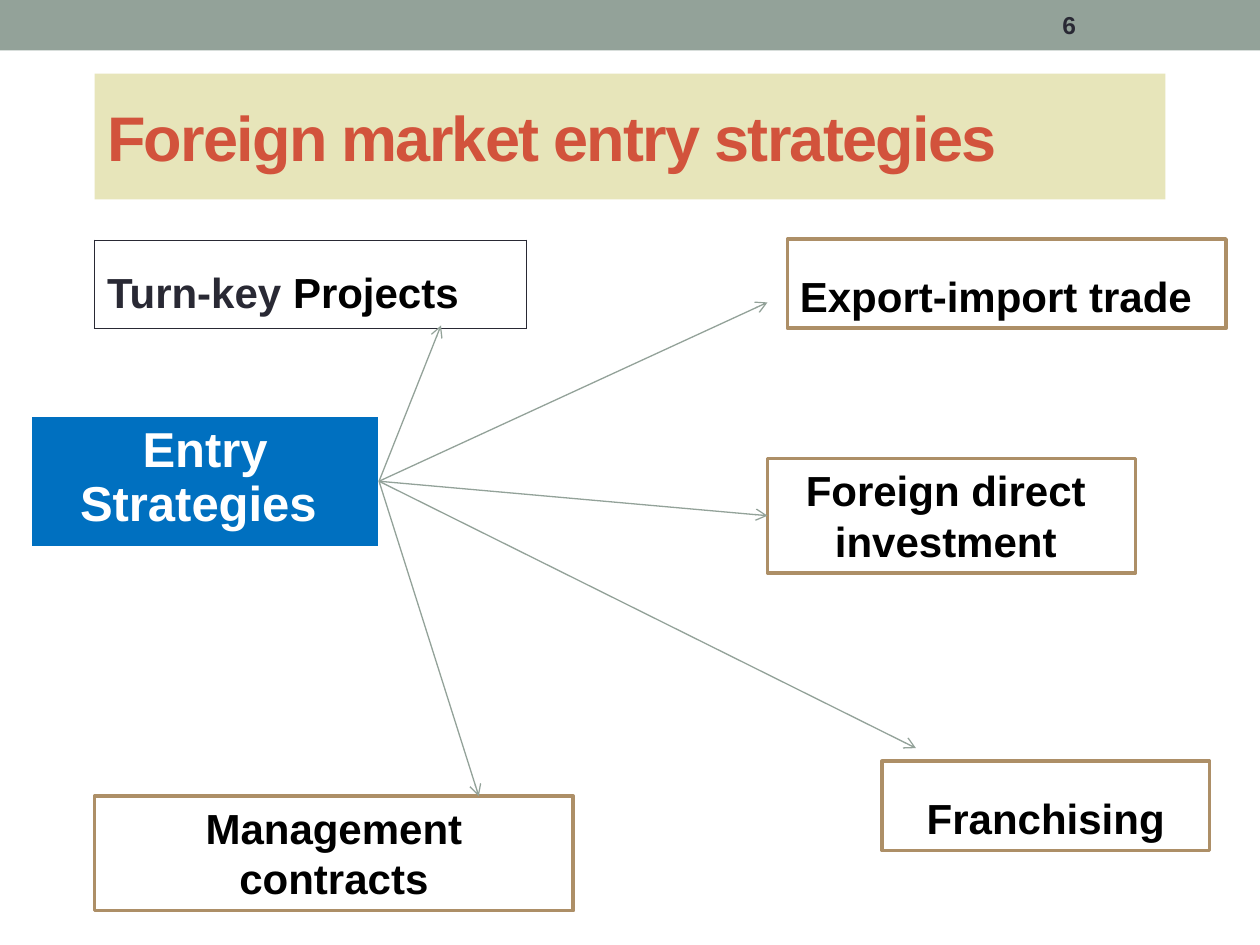
import pptx
import pptx.util
import pptx.dml.color
import pptx.enum.shapes
import pptx.enum.text
import pptx.oxml
import pptx.oxml.ns
from lxml import etree

Pt = pptx.util.Pt
RGB = pptx.dml.color.RGBColor.from_string
ALIGN = pptx.enum.text.PP_ALIGN
ANCHOR = pptx.enum.text.MSO_ANCHOR
RECTANGLE = pptx.enum.shapes.MSO_SHAPE.RECTANGLE
qn = pptx.oxml.ns.qn

COLORS = {
    "band": "93A299", "title_fill": "E7E5BA", "title": "D2533C",
    "ink": "292934", "black": "000000", "white": "FFFFFF",
    "border": "AD8F67", "hub": "0070C0",
}


def style(paragraph, size, color, align=ALIGN.LEFT, spacing=None):
    paragraph.alignment = align
    if spacing:
        paragraph.line_spacing = spacing
    paragraph.font.name = "Arial"
    paragraph.font.size = Pt(size)
    paragraph.font.bold = True
    paragraph.font.color.rgb = RGB(COLORS[color])


def add_cell(left, top, width, height, fill, border):
    table = slide.shapes.add_table(1, 1, Pt(left), Pt(top), Pt(width), Pt(height)).table
    table.first_row = table.horz_banding = False
    cell = table.cell(0, 0)
    properties = cell._tc.get_or_add_tcPr()
    for side in ("lnL", "lnR", "lnT", "lnB"):
        line = etree.SubElement(properties, qn("a:" + side), w=str(Pt(1)))
        solid = etree.SubElement(line, qn("a:solidFill"))
        etree.SubElement(solid, qn("a:srgbClr"), val=COLORS[border])
    cell.fill.solid()
    cell.fill.fore_color.rgb = RGB(COLORS[fill])
    return cell


presentation = pptx.Presentation()
presentation.slide_width, presentation.slide_height = Pt(720), Pt(540)
slide = presentation.slides.add_slide(presentation.slide_layouts[5])

band = slide.shapes.add_shape(RECTANGLE, 0, 0, Pt(720), Pt(28.8))
band.shadow.inherit = False
band.fill.solid()
band.fill.fore_color.rgb = RGB(COLORS["band"])
band.line.fill.background()

title = slide.shapes.title
title.left, title.top, title.width, title.height = Pt(54), Pt(42), Pt(612), Pt(72)
title.fill.solid()
title.fill.fore_color.rgb = RGB(COLORS["title_fill"])
title.text_frame.text = "Foreign market entry strategies"
title.text_frame.vertical_anchor = ANCHOR.MIDDLE
style(title.text_frame.paragraphs[0], 36, "title")
title.text_frame.paragraphs[0].runs[0].font._element.set("spc", "-100")

page_number = slide.shapes.add_textbox(Pt(600), Pt(1.4), Pt(84), Pt(26)).text_frame
page_number.word_wrap = True
page_number.vertical_anchor = ANCHOR.MIDDLE
page_number.text = "6"
style(page_number.paragraphs[0], 14, "ink")

strategies = {}
for text, left, top, width, height, align, spacing in [
    ("Export-import trade", 450, 136.6, 250.6, 51, ALIGN.LEFT, 1.5),
    ("Foreign direct \ninvestment ", 438.6, 262, 210.4, 65.4, ALIGN.CENTER, None),
    ("Franchising", 504, 435, 187.2, 51, ALIGN.CENTER, 1.5),
    ("Management contracts", 54, 455, 273.6, 65.4, ALIGN.CENTER, None),
]:
    strategy = slide.shapes.add_shape(RECTANGLE, Pt(left), Pt(top), Pt(width), Pt(height))
    strategy.shadow.inherit = False
    strategy.fill.solid()
    strategy.fill.fore_color.rgb = RGB(COLORS["white"])
    strategy.line.color.rgb = RGB(COLORS["border"])
    strategy.line.width = Pt(2.08)
    strategy.text_frame.word_wrap = True
    strategy.text_frame.vertical_anchor = ANCHOR.TOP
    strategy.text_frame.text = text
    for paragraph in strategy.text_frame.paragraphs:
        style(paragraph, 24, "black", align, spacing)
    strategies[text.split()[0]] = strategy

entry_strategies = add_cell(18, 238, 198.4, 73, "hub", "white")
entry_strategies.text = "Entry Strategies "
style(entry_strategies.text_frame.paragraphs[0], 28, "white", ALIGN.CENTER)

turn_key = add_cell(54, 137.4, 247, 50.4, "white", "ink")
turn_key_text = turn_key.text_frame.paragraphs[0]
turn_key_text.add_run().text = "Turn-key "
projects = turn_key_text.add_run()
projects.text = "Projects"
style(turn_key_text, 24, "ink", spacing=1.5)
projects.font.color.rgb = RGB(COLORS["black"])

for x, y, target in [
    (438.6, 172.8, None),
    (438.6, 294.7, "Foreign"),
    (523.4, 427.5, None),
    (273.6, 455, None),
    (252, 186, None),
]:
    arrow = slide.shapes.add_connector(
        pptx.enum.shapes.MSO_CONNECTOR.STRAIGHT, Pt(216.6), Pt(275), Pt(x), Pt(y))
    if target:
        arrow.end_connect(strategies[target], 1)
    arrow.line.color.rgb = RGB(COLORS["band"])
    arrow.line.width = Pt(0.75)
    etree.SubElement(arrow.line._get_or_add_ln(), qn("a:tailEnd"), type="arrow")
    etree.SubElement(arrow._element.spPr, qn("a:effectLst"))

presentation.save("out.pptx")
